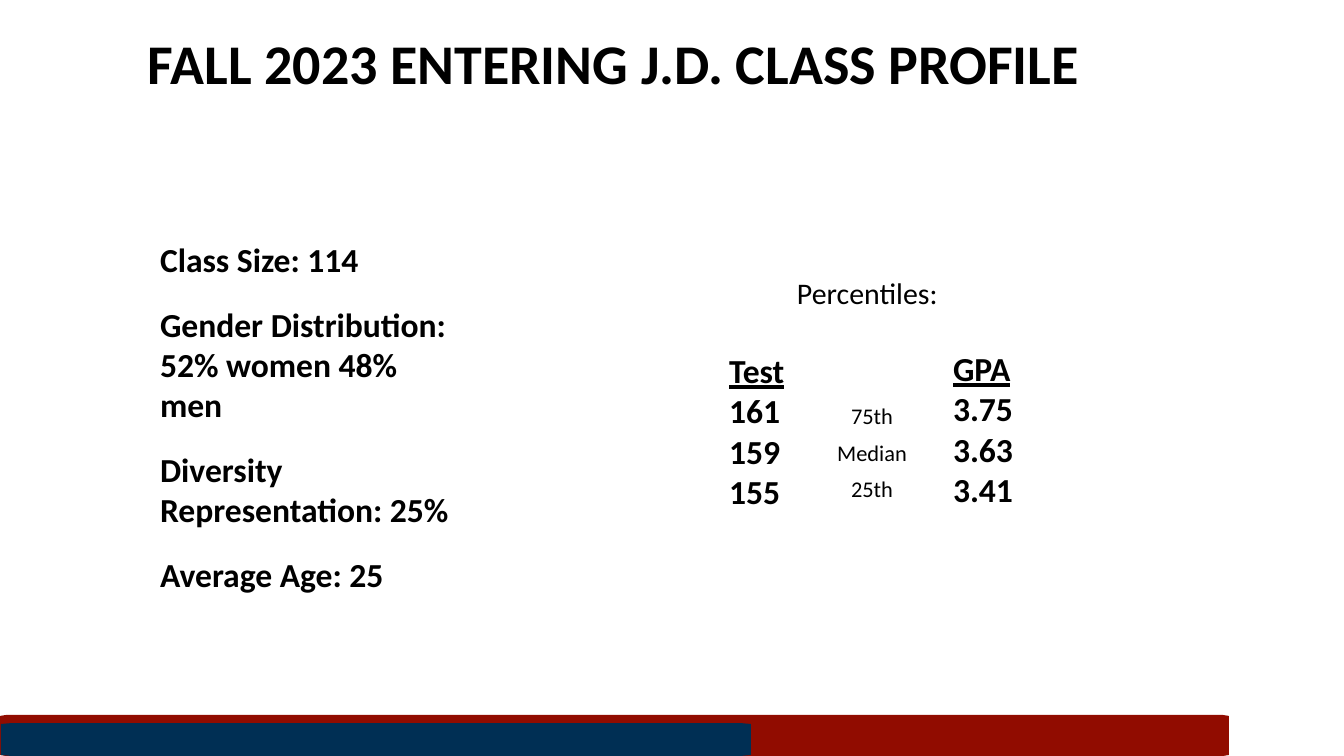
from pptx import Presentation
from pptx.dml.color import RGBColor
from pptx.enum.text import MSO_ANCHOR, MSO_AUTO_SIZE, PP_ALIGN
from pptx.util import Emu, Pt
from lxml.etree import SubElement

PX = 914400 / 67.2
FONT, BLACK = "Calibri", "000000"
INSET = 7

# Content
TITLE = "FALL 2023 ENTERING J.D. CLASS PROFILE"
FACTS = ["Class Size: 114",
         "Gender Distribution: 52% women 48% men",
         "Diversity Representation: 25%",
         "Average Age: 25"]
# Heading, values, box
SCORES = [("Test", ["161", "159", "155"], (722, 343, 116, 177)),
          ("GPA", ["3.75", "3.63", "3.41"], (946, 341, 96, 212))]
PERCENTILES = ["75th", "Median", "25th"]
# Box, corner width, colour
BARS = [((0, 715, 1229, 41), 6, "910C00"),
        ((1, 723, 750, 33), 11, "002F54")]


def px(n):
    return Emu(round(n * PX))


def rgb(color):
    return RGBColor.from_string(color)


def place(sp, box):
    sp.left, sp.top, sp.width, sp.height = map(px, box)


def write(sp, lines, size, bold=False, align=PP_ALIGN.LEFT, gap=0,
          underline_first=False, left=INSET, top=INSET, right=INSET):
    tf = sp.text_frame
    tf.word_wrap = True
    tf.auto_size = MSO_AUTO_SIZE.NONE
    tf.vertical_anchor = MSO_ANCHOR.TOP
    tf.margin_left, tf.margin_top, tf.margin_right = px(left), px(top), px(right)
    for i, line in enumerate(lines):
        p = tf.add_paragraph() if i else tf.paragraphs[0]
        p.alignment = align
        p.line_spacing = 1.0
        p.space_before = Pt(gap if i else 0)
        r = p.add_run()
        r.text = line
        r.font.name, r.font.size, r.font.bold = FONT, Pt(size), bold
        r.font.underline = underline_first and i == 0
        r.font.color.rgb = rgb(BLACK)


def add_text(s, box, lines, size, **style):
    write(s.shapes.add_textbox(*map(px, box)), lines, size, **style)


def add_bar(s, box, rx, color, ry=1):
    x, y, w, h = box
    r, b = x + w, y + h
    points = [(r - rx, y), (r, y + ry), (r, b - ry), (r - rx, b),
              (x + rx, b), (x, b - ry), (x, y + ry)]
    builder = s.shapes.build_freeform(x + rx, y, scale=PX)
    builder.add_line_segments(points, close=True)
    sp = builder.convert_to_shape()
    sp.shadow.inherit = False
    sp.fill.solid()
    sp.fill.fore_color.rgb = rgb(color)
    sp.line.fill.background()


def main():
    prs = Presentation()
    prs.slide_width, prs.slide_height = px(1344), px(756)
    s = prs.slides.add_slide(prs.slide_layouts[1])

    # Title
    title, body = s.placeholders
    place(title, (148, -39, 944, 233))
    write(title, [TITLE], 60, bold=True, left=0, top=67, right=0)

    # Footer bars
    for bar in BARS:
        add_bar(s, *bar)

    # Class facts
    place(body, (153, 232, 306, 374))
    write(body, FACTS, 36, bold=True, gap=26)
    for p in body.text_frame.paragraphs:
        pPr = p._p.get_or_add_pPr()
        pPr.set("marL", "0")
        pPr.set("indent", "0")
        SubElement(pPr, "{http://schemas.openxmlformats.org/drawingml/2006/main}buNone")

    # Score columns with their percentile labels
    for heading, values, box in SCORES:
        add_text(s, box, [heading] + values, 36, bold=True, underline_first=True)
    add_text(s, (716, 268, 582, 50), ["Percentiles:"], 32, left=81)
    add_text(s, (827, 395, 90, 116), PERCENTILES, 24,
             align=PP_ALIGN.CENTER, gap=10.5)

    prs.save("out.pptx")


if __name__ == "__main__":
    main()
